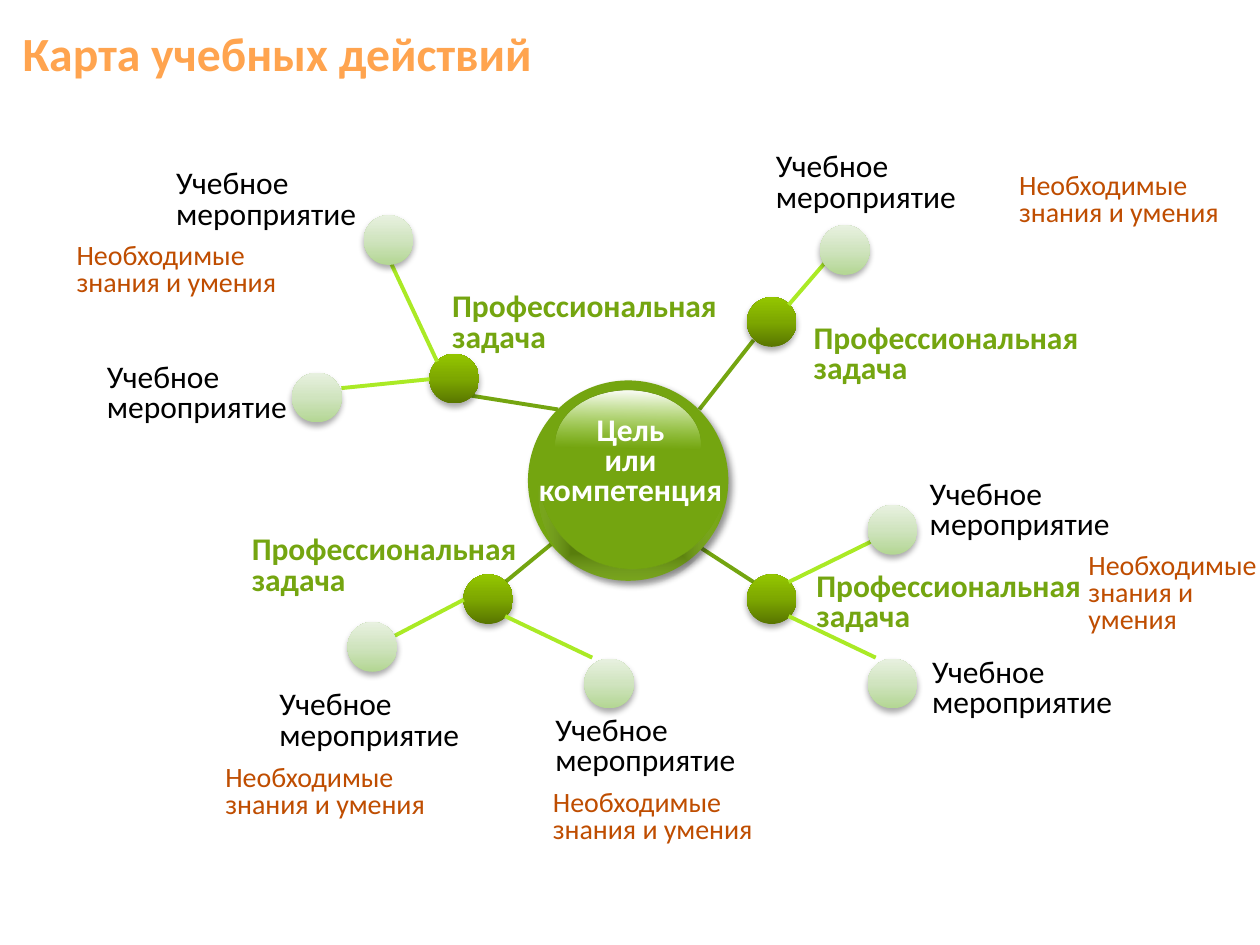
from dataclasses import dataclass
from typing import Any

from lxml import etree
from pptx import Presentation
from pptx import util as u
from pptx.dml.color import RGBColor
from pptx.enum import shapes, text
from pptx.oxml import ns

HUB = [(0, "587500", 100), (50, "7DA700", 100), (100, "94C600", 100)]
LEAF = [(0, "B3D693", 100), (50, "D0E4BF", 100), (100, "E8F1E0", 100)]
GLOSS = [(0, "FFFFFF", 100), (54, "D5FFA2", 0)]
SHADE = [(24, "000000", 24), (100, "FFFFFF", 0)]
BALL_SHADOW = ("000000", 32, 3.5, 2.2, 90)
GOAL_SHADOW = ("000000", 43, 4, 3, 45)
BALL = 28.4


def color(value):
    return RGBColor.from_string(value)


def child(parent, tag, **attributes):
    return etree.SubElement(parent, ns.qn(tag), {k: str(v) for k, v in attributes.items()})


def add_color(parent, value, opacity):
    element = child(parent, "a:srgbClr", val=value)
    if opacity < 100:
        child(element, "a:alpha", val=opacity * 1000)


@dataclass
class Map:
    slide: Any
    font: str = "Calibri"
    green: str = "74A510"
    lime: str = "AAEA25"

    def gradient(self, shape, stops, angle):
        shape.fill.background()
        properties = shape._element.spPr
        empty = properties.find(ns.qn("a:noFill"))
        fill = etree.Element(ns.qn("a:gradFill"), rotWithShape="1")
        stop_list = child(fill, "a:gsLst")
        for position, value, opacity in stops:
            add_color(child(stop_list, "a:gs", pos=position * 1000), value, opacity)
        if angle is None:
            target = child(fill, "a:path", path="shape")
            child(target, "a:fillToRect", l=50000, t=50000, r=50000, b=50000)
        else:
            child(fill, "a:lin", ang=angle * 60000, scaled=0)
        properties.replace(empty, fill)

    def figure(self, kind, left, top, width, height, fill, angle=None, shadow=None):
        shape = self.slide.shapes.add_shape(
            kind, u.Pt(left), u.Pt(top), u.Pt(width), u.Pt(height))
        shape.line.fill.background()
        shape.shadow.inherit = False
        if isinstance(fill, str):
            shape.fill.solid()
            shape.fill.fore_color.rgb = color(fill)
        else:
            self.gradient(shape, fill, angle)
        if shadow:
            value, opacity, blur, distance, direction = shadow
            effects = shape._element.spPr.find(ns.qn("a:effectLst"))
            outer = child(effects, "a:outerShdw", blurRad=u.Pt(blur), dist=u.Pt(distance),
                          dir=direction * 60000, algn="ctr", rotWithShape=0)
            add_color(outer, value, opacity)
        return shape

    def ball(self, center_x, center_y, stops):
        self.figure(shapes.MSO_SHAPE.OVAL, center_x - BALL / 2, center_y - BALL / 2,
                    BALL, BALL, stops, 270, BALL_SHADOW)

    def line(self, ends, value):
        connector = self.slide.shapes.add_connector(
            shapes.MSO_CONNECTOR.STRAIGHT, *(u.Pt(end) for end in ends))
        connector.line.color.rgb = color(value)
        connector.line.width = u.Pt(2.25)
        child(connector._element.spPr, "a:effectLst")

    def branch(self, link, hub, leaves):
        self.line(link, self.green)
        self.ball(*hub, HUB)
        for ends, leaf in leaves:
            self.line(ends, self.lime)
            self.ball(*leaf, LEAF)

    def label(self, place, lines, size, value, bold=False, middle=False,
              align=text.PP_ALIGN.LEFT, spacing=0.8):
        box = self.slide.shapes.add_textbox(*(u.Pt(length) for length in place))
        frame = box.text_frame
        frame.word_wrap = True
        frame.vertical_anchor = text.MSO_ANCHOR.MIDDLE if middle else text.MSO_ANCHOR.TOP
        for index, line in enumerate(lines):
            paragraph = frame.add_paragraph() if index else frame.paragraphs[0]
            paragraph.alignment = align
            paragraph.line_spacing = spacing
            run = paragraph.add_run()
            run.text = line
            run.font.name = self.font
            run.font.size = u.Pt(size)
            run.font.bold = bold
            run.font.color.rgb = color(value)

    def goal(self):
        oval = shapes.MSO_SHAPE.OVAL
        self.figure(oval, 301.7, 217.4, 114.5, 114.5, self.green, shadow=GOAL_SHADOW)
        self.figure(oval, 317.5, 223.2, 82.8, 61.2, GLOSS, 91)
        self.label((298, 234.7, 124.6, 59.8), ["Цель", "или", "компетенция"], 18,
                   "FFFFFF", bold=True, align=text.PP_ALIGN.CENTER)
        moon = self.figure(shapes.MSO_SHAPE.MOON, 331.2, 255.6, 53.3, 105.1, SHADE)
        moon.adjustments[0] = 0.19
        moon.rotation = 275.9


BRANCHES = [
    ((399.6, 234, 430.6, 194.4), (441, 184), [
        ((450.7, 174.2, 473, 148.3), (482.8, 142.9))]),
    ((399.6, 312.5, 430.6, 332.6), (441, 342.4), [
        ((450.7, 332.6, 500.4, 308.2), (510.1, 302.8)),
        ((450.7, 352.1, 500.4, 375.8), (510.1, 390.6))]),
    ((317.5, 308.9, 288.7, 332.6), (279, 342.4), [
        ((265, 342.7, 203, 375.1), (212.8, 369.7)),
        ((288.7, 352.1, 338.4, 375.8), (348.1, 390.6))]),
    ((319, 234, 269.3, 226.1), (259.6, 216.4), [
        ((249.8, 206.6, 221.8, 146.9), (222.1, 137.2)),
        ((245.5, 216.7, 195.1, 221.8), (181.1, 227.2))]),
]
TASKS = [(251.3, 164.2, 166.3, 42.5), (457.9, 182.2, 168.5, 42.5),
         (459.4, 324, 167, 42.5), (136.8, 303.1, 165.6, 42.5)]
ACTIVITIES = [(54, 196.6, 130.3, 57.6), (93.6, 82.8, 136.1, 64.1),
              (436.3, 82.8, 121.7, 44.6), (310.3, 404.6, 126, 44.6),
              (524.2, 270, 124.6, 44.6), (525.6, 371.5, 123.8, 44.6),
              (152.6, 390.2, 126.7, 44.6)]
SKILLS = [(36.7, 136.1, 129.6, 38.2), (575.3, 95.8, 130.3, 38.2),
          (614.9, 313.2, 118.8, 54), (308.9, 448.6, 141.8, 38.2),
          (121.7, 434.2, 129.6, 38.2)]


def main():
    presentation = Presentation()
    presentation.slide_width = u.Pt(720)
    presentation.slide_height = u.Pt(540)
    learning = Map(presentation.slides.add_slide(presentation.slide_layouts[6]))
    for branch in BRANCHES:
        learning.branch(*branch)
    learning.goal()
    learning.label((5.8, 5, 333.4, 49.7), ["Карта учебных действий"], 27.2, "FFA44F",
                   bold=True, middle=True, spacing=1.0)
    for place in TASKS:
        learning.label(place, ["Профессиональная задача"], 18, learning.green, bold=True)
    for place in ACTIVITIES:
        learning.label(place, ["Учебное мероприятие"], 18, "000000", middle=True)
    for place in SKILLS:
        learning.label(place, ["Необходимые знания и умения"], 16, "BF4D00")
    presentation.save("out.pptx")


if __name__ == "__main__":
    main()
